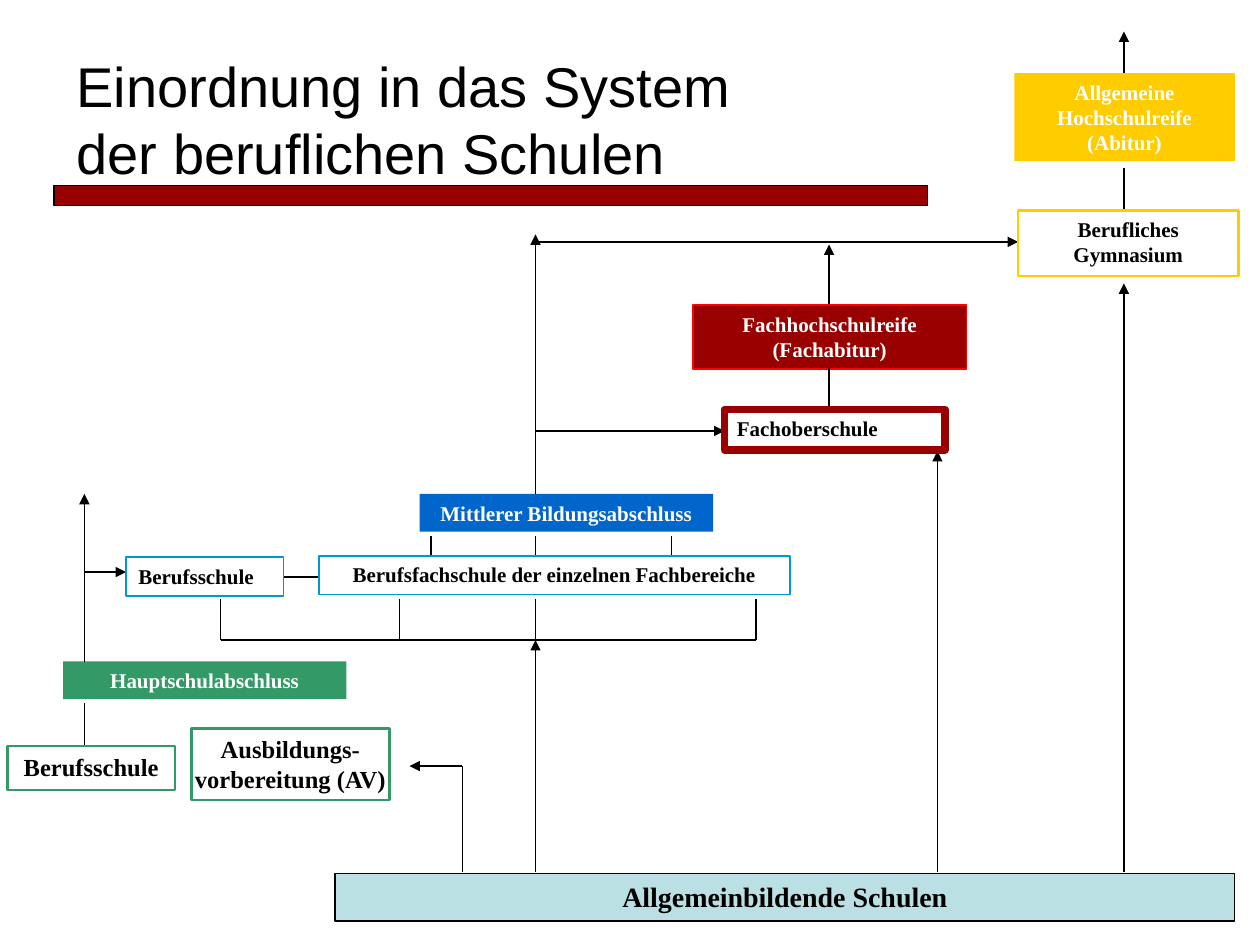
from dataclasses import dataclass

from lxml import etree
from pptx import Presentation
from pptx.dml.color import RGBColor
from pptx.enum import shapes, text
from pptx.oxml import ns
from pptx.util import Inches, Pt


@dataclass(frozen=True)
class Theme:
    black: str = "000000"
    white: str = "FFFFFF"
    maroon: str = "990000"
    red: str = "FF0000"
    blue: str = "0066CC"
    sky: str = "0099CC"
    green: str = "339966"
    yellow: str = "FFCC00"
    pale: str = "BBE0E3"
    heading: str = "Arial"
    body: str = "Times New Roman"
    title: int = 32
    base: int = 16
    entry: int = 14
    label: int = 12
    thin: float = 0.75


THEME = Theme()


def color(value):
    return RGBColor.from_string(value)


def write(box, content, *, size, font, ink=THEME.black, bold=False,
          align=text.PP_ALIGN.LEFT, inset=0.1):
    frame = box.text_frame
    frame.word_wrap = True
    frame.auto_size = text.MSO_AUTO_SIZE.SHAPE_TO_FIT_TEXT
    frame.vertical_anchor = text.MSO_ANCHOR.TOP
    frame.margin_left = frame.margin_right = Inches(inset)
    for index, line in enumerate(content.split("\n")):
        para = frame.add_paragraph() if index else frame.paragraphs[0]
        para.alignment = align
        span = para.add_run()
        span.text = line
        span.font.name = font
        span.font.size = Pt(size)
        span.font.bold = bold
        span.font.color.rgb = color(ink)


def add_title(page, content, place):
    box = page.shapes.add_textbox(*map(Inches, place))
    write(box, content, size=THEME.title, font=THEME.heading)


def add_box(page, place, content="", *, fill=None, line=None, weight=THEME.thin,
            ink=THEME.black, size=THEME.label, align=text.PP_ALIGN.CENTER, inset=0.1):
    box = page.shapes.add_shape(shapes.MSO_SHAPE.RECTANGLE, *map(Inches, place))
    box.shadow.inherit = False
    if fill:
        box.fill.solid()
        box.fill.fore_color.rgb = color(fill)
    else:
        box.fill.background()
    if line:
        box.line.color.rgb = color(line)
        box.line.width = Pt(weight)
    else:
        box.line.fill.background()
    if content:
        write(box, content, size=size, font=THEME.body, ink=ink, bold=True,
              align=align, inset=inset)


def add_line(page, start, end, *, arrow=False, weight=THEME.thin):
    line = page.shapes.add_connector(
        shapes.MSO_CONNECTOR.STRAIGHT, *map(Inches, (*start, *end)))
    line.line.color.rgb = color(THEME.black)
    line.line.width = Pt(weight)
    if arrow:
        outline = line.line._get_or_add_ln()
        etree.SubElement(outline, ns.qn("a:tailEnd"), type="triangle")
    etree.SubElement(line._element.spPr, ns.qn("a:effectLst"))


def add_lines(page):
    left, middle, technical, academic = 0.67, 4.25, 6.58, 8.92
    base, rail, upper = 6.92, 5.08, 1.92

    for x, bottom, top in (
        (left, 5.25, 3.92),
        (middle, 3.92, 1.86),
        (middle, base, rail),
        (technical, 2.41, 1.94),
        (7.44, base, 3.58),
        (academic, base, 2.25),
        (academic, 0.58, 0.25),
    ):
        add_line(page, (x, bottom), (x, top), arrow=True)

    for x, bottom, top in (
        (left, 5.92, 5.58),
        (technical, 3.25, 2.92),
        (academic, 1.67, 1.33),
        (3.67, base, 6.08),
    ):
        add_line(page, (x, bottom), (x, top))
    for x in (3.42, middle, 5.33):
        add_line(page, (x, 4.42), (x, 4.25))
    for x in (1.75, 3.17, middle, 6):
        add_line(page, (x, rail), (x, 4.75))

    add_line(page, (1.75, rail), (6, rail))
    add_line(page, (2.25, 4.58), (2.53, 4.58))
    add_line(page, (3.67, 6.08), (3.25, 6.08), arrow=True)
    add_line(page, (left, 4.54), (1, 4.54), arrow=True)
    add_line(page, (middle, upper), (8.08, upper), arrow=True)
    add_line(page, (middle, 3.42), (5.75, 3.42), arrow=True, weight=1.5)


def add_qualifications(page):
    add_box(page, (5.5, 2.42, 2.17, 0.51), "Fachhochschulreife (Fachabitur)",
            fill=THEME.maroon, line=THEME.red, ink=THEME.white)
    for place, content, fill in (
        ((3.33, 3.92, 2.33, 0.3), "Mittlerer Bildungsabschluss", THEME.blue),
        ((0.5, 5.25, 2.25, 0.3), "Hauptschulabschluss", THEME.green),
        ((8.05, 0.58, 1.75, 0.7), "Allgemeine Hochschulreife (Abitur)", THEME.yellow),
    ):
        add_box(page, place, content, fill=fill, ink=THEME.white)


def add_schools(page):
    left = text.PP_ALIGN.LEFT
    add_box(page, (5.75, 3.25, 1.75, 0.32), "Fachoberschule",
            line=THEME.maroon, weight=4.5, align=left)
    add_box(page, (1, 4.42, 1.25, 0.31), "Berufsschule",
            line=THEME.sky, weight=1, align=left)
    add_box(page, (2.53, 4.41, 3.74, 0.31),
            "Berufsfachschule der einzelnen Fachbereiche", line=THEME.sky, weight=1)
    add_box(page, (8.08, 1.67, 1.75, 0.52), "Berufliches Gymnasium",
            line=THEME.yellow, weight=1.5)
    for place, content in (
        ((0.06, 5.92, 1.33, 0.35), "Berufsschule"),
        ((1.52, 5.78, 1.57, 0.57), "Ausbildungs-vorbereitung (AV)"),
    ):
        add_box(page, place, content, fill=THEME.white, line=THEME.green,
                weight=1.5, size=THEME.entry, inset=0)
    add_box(page, (2.66, 6.93, 7.14, 0.38), "Allgemeinbildende Schulen",
            fill=THEME.pale, line=THEME.black, size=THEME.base)


def main():
    deck = Presentation()
    deck.slide_width, deck.slide_height = Inches(10), Inches(7.5)
    page = deck.slides.add_slide(deck.slide_layouts[6])
    add_qualifications(page)
    add_lines(page)
    add_title(page, "Einordnung in das System\nder beruflichen Schulen",
              (0.51, 0.36, 6.3, 1.17))
    add_box(page, (0.43, 1.47, 6.93, 0.16), fill=THEME.maroon, line=THEME.black)
    add_schools(page)
    deck.save("out.pptx")


if __name__ == "__main__":
    main()
